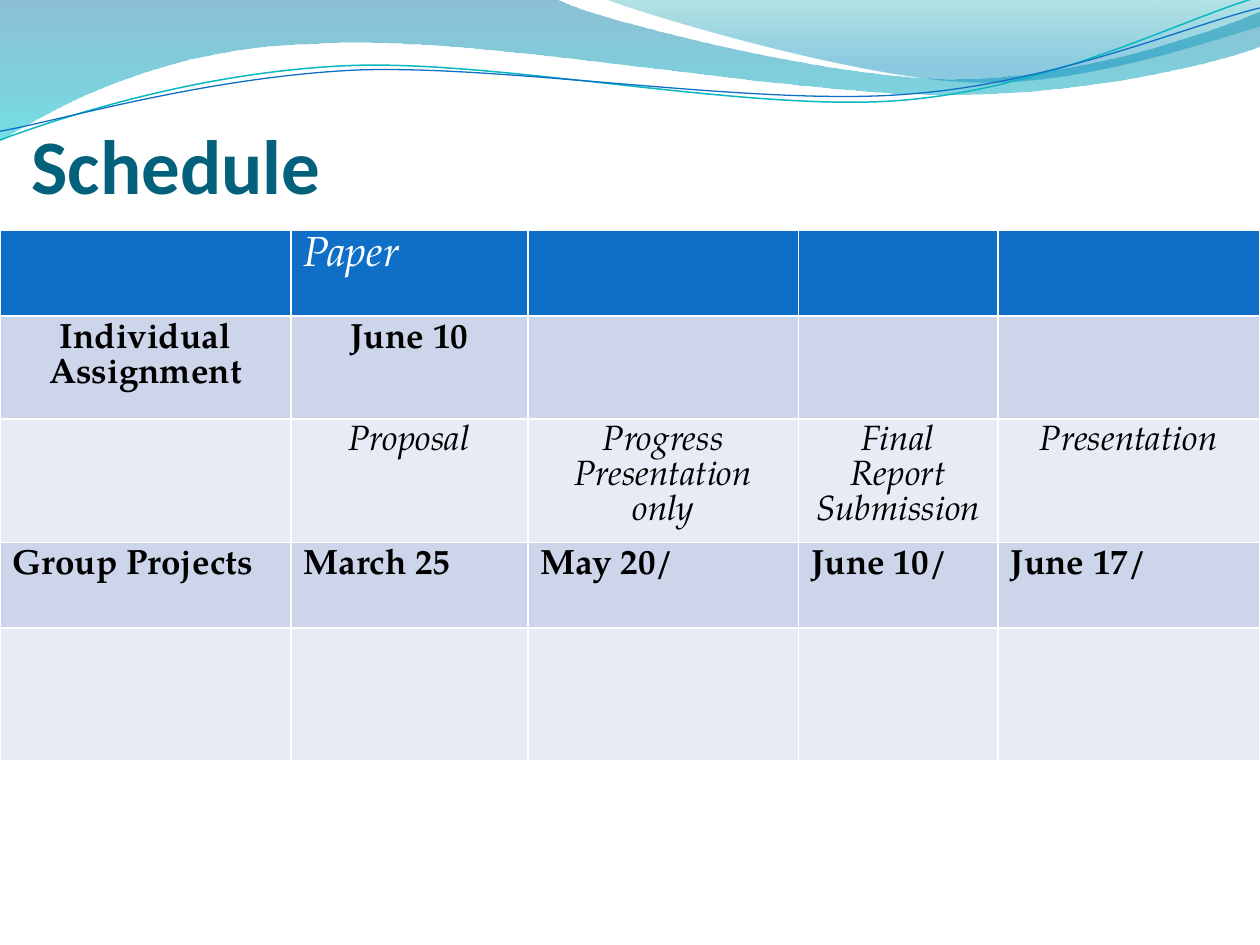
"""Build the course schedule slide: a wave header, a title and a table."""
from dataclasses import dataclass

from lxml.etree import Element, SubElement
from pptx import Presentation
from pptx.dml.color import RGBColor
from pptx.enum.text import MSO_ANCHOR, PP_ALIGN
from pptx.oxml.ns import qn
from pptx.util import Pt


@dataclass(frozen=True)
class Theme:
    """Colours, fonts and type sizes of the slide."""
    title: str = "04617B"
    header: str = "0F6FC6"
    header_text: str = "FFFFFF"
    text: str = "000000"
    bands: tuple = ("E7EBF5", "CCD5EA")
    teal: str = "0AB8BF"
    blue: str = "0F6FC6"
    back_wave: tuple = ((0, "0074A1", 45), (1, "00C6CF", 55))
    front_wave: tuple = ((0, "00A1A9", 30), (0.8, "008BBF", 45))
    title_font: str = "Calibri"
    table_font: str = "TeX Gyre Pagella"
    title_size: int = 44
    header_size: int = 24
    body_size: int = 20


THEME = Theme()

BACK_WAVE = [
    [(0, 0)], [(317, -1)],
    [(343, 12), (478, 45), (546, 45)], [(614, 45), (690, 19), (720, 6.5)],
    [(721, 26)],
    [(708, 32), (626, 55), (537, 54)], [(446, 54), (275, 20), (185, 24.5)],
    [(93, 26), (33, 60), (-1, 81)],
]
FRONT_WAVE = [
    [(345, -1)],
    [(367, 8), (491, 45), (554, 47)], [(616, 50), (692, 23), (720, 15)],
    [(720, 0)],
]
TEAL_LINE = [
    [(0, 80)],
    [(35, 67), (114, 41), (199.5, 37.5)], [(284, 34), (427, 64), (513, 57.5)],
    [(600, 51), (675, 11), (718.5, -1.5)],
]
BLUE_LINE = [
    [(0, 75)],
    [(34, 69), (118, 44), (204, 40)], [(290, 37), (430, 60.5), (516, 54)],
    [(602, 48), (677, 15), (720, 4.5)],
]

COL_WIDTHS = (166.2, 135.4, 154.8, 113.8, 149.8)
ROW_HEIGHTS = (49, 59, 70.5, 49, 76)
ROWS = [
    ("", "Paper", "", "", ""),
    ("Individual Assignment", "June 10", "", "", ""),
    ("", "Proposal", "Progress\nPresentation only", "Final Report Submission",
     "Presentation"),
    ("Group Projects", "March 25", "May 20/", "June 10/", "June 17/"),
    ("", "", "", "", ""),
]
ITALIC_ROWS = (0, 2)
CENTRED_ROWS = (1, 2)


def rgb(code):
    """Return the colour for a hex code."""
    return RGBColor.from_string(code)


def bend(sp, segments):
    """Turn the three-point segments of a freeform into cubic curves."""
    for line, segment in zip(list(sp.element.iter(qn("a:lnTo"))), segments):
        if len(segment) == 3:
            curve = Element(qn("a:cubicBezTo"))
            for x, y in segment:
                SubElement(curve, qn("a:pt"), x=str(Pt(x) - sp.left), y=str(Pt(y) - sp.top))
            line.getparent().replace(line, curve)


def add_outline(s, segments, close):
    """Add a freeform made of straight and curved segments."""
    start, *rest = [(Pt(x), Pt(y)) for x, y in (segment[-1] for segment in segments)]
    builder = s.shapes.build_freeform(*start, scale=1.0)
    builder.add_line_segments(rest, close=close)
    sp = builder.convert_to_shape()
    sp.shadow.inherit = False
    bend(sp, segments[1:])
    return sp


def add_wave(s, segments, stops):
    """Add a closed wave with a translucent vertical gradient."""
    sp = add_outline(s, segments, True)
    sp.line.fill.background()
    sp.fill.gradient()
    sp.fill.gradient_angle = 270
    for stop, (position, color, _) in zip(sp.fill.gradient_stops, stops):
        stop.position = position
        stop.color.rgb = rgb(color)
    colors = sp.element.spPr.iter(qn("a:srgbClr"))
    for element, (_, _, opacity) in zip(colors, stops):
        SubElement(element, qn("a:alpha"), val=str(opacity * 1000))


def add_wave_line(s, segments, color, width):
    """Add an open curved line."""
    sp = add_outline(s, segments, False)
    sp.fill.background()
    sp.line.color.rgb = rgb(color)
    sp.line.width = Pt(width)


def format_run(r, font, size, color, bold=False, italic=False):
    """Set the type of a run."""
    r.font.name = font
    r.font.size = Pt(size)
    r.font.color.rgb = rgb(color)
    r.font.bold = bold
    r.font.italic = italic


def set_title(s, text):
    """Place and format the title in front of the waves."""
    sp = s.shapes.title
    sp.element.getparent().append(sp.element)
    sp.left, sp.top, sp.width, sp.height = Pt(18), Pt(30), Pt(648), Pt(90)
    tf = sp.text_frame
    tf.text = text
    tf.vertical_anchor = MSO_ANCHOR.BOTTOM
    tf.margin_left = tf.margin_right = tf.margin_bottom = 0
    tf.margin_top = Pt(3.6)
    p = tf.paragraphs[0]
    p.alignment = PP_ALIGN.LEFT
    format_run(p.runs[0], THEME.title_font, THEME.title_size, THEME.title, bold=True)


def fill_cell(cell, text, row):
    """Write one table cell in the style of its row."""
    header, italic = row == 0, row in ITALIC_ROWS
    size = THEME.header_size if header else THEME.body_size
    color = THEME.header_text if header else THEME.text
    cell.fill.solid()
    cell.fill.fore_color.rgb = rgb(THEME.header if header else THEME.bands[row % 2])
    if not text:
        return
    cell.text_frame.text = text
    for p in cell.text_frame.paragraphs:
        p.alignment = PP_ALIGN.CENTER if row in CENTRED_ROWS else PP_ALIGN.LEFT
        p.line_spacing = Pt(size)
        for r in p.runs:
            format_run(r, THEME.table_font, size, color, not italic, italic)


def add_schedule(s):
    """Add the schedule table."""
    table = s.shapes.add_table(len(ROWS), len(COL_WIDTHS), 0, Pt(131.5),
                               Pt(sum(COL_WIDTHS)), Pt(sum(ROW_HEIGHTS))).table
    for column, width in zip(table.columns, COL_WIDTHS):
        column.width = Pt(width)
    for i, (height, texts) in enumerate(zip(ROW_HEIGHTS, ROWS)):
        table.rows[i].height = Pt(height)
        for j, text in enumerate(texts):
            fill_cell(table.cell(i, j), text, i)


def main():
    """Build and save the slide."""
    prs = Presentation()
    prs.slide_width, prs.slide_height = Pt(720), Pt(540)
    s = prs.slides.add_slide(prs.slide_layouts[5])
    add_wave(s, BACK_WAVE, THEME.back_wave)
    add_wave(s, FRONT_WAVE, THEME.front_wave)
    add_wave_line(s, TEAL_LINE, THEME.teal, 0.85)
    add_wave_line(s, BLUE_LINE, THEME.blue, 0.75)
    set_title(s, "Schedule")
    add_schedule(s)
    prs.save("out.pptx")


if __name__ == "__main__":
    main()
